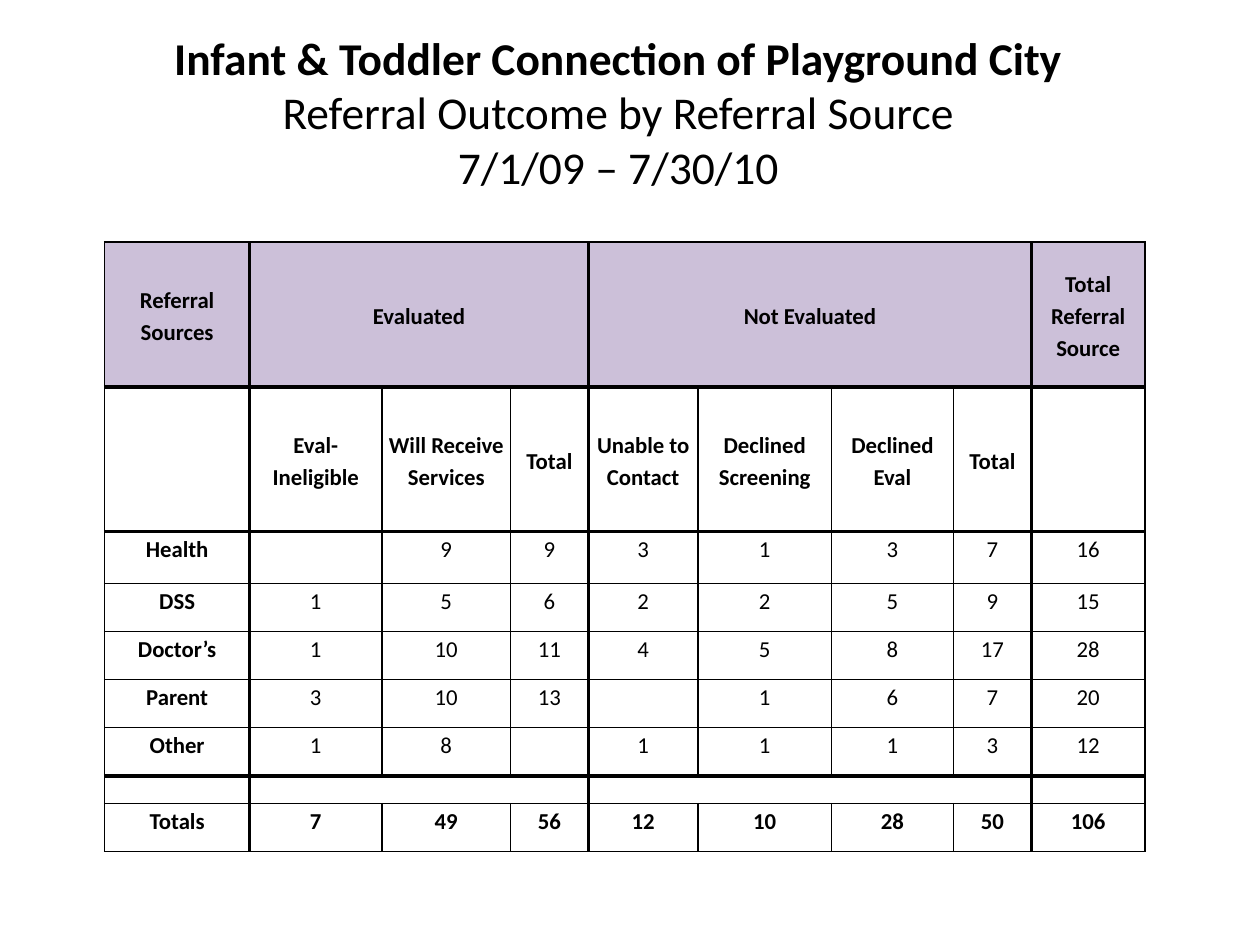
from lxml import etree
from pptx import Presentation
from pptx.dml.color import RGBColor
from pptx.enum.text import MSO_ANCHOR, MSO_AUTO_SIZE, PP_ALIGN
from pptx.oxml.ns import qn
from pptx.util import Cm, Pt

CENTER = PP_ALIGN.CENTER
TOP, MIDDLE = MSO_ANCHOR.TOP, MSO_ANCHOR.MIDDLE
GROW = MSO_AUTO_SIZE.SHAPE_TO_FIT_TEXT

FONT = "Calibri"
BLACK = "000000"
LILAC = "CCC0D9"
THIN, THICK = 1, 2.25

TITLE_LINES = [
    "Infant & Toddler Connection of Playground City",
    "Referral Outcome by Referral Source",
    "7/1/09 – 7/30/10",
]
REFERRALS = [
    ["Referral Sources", "Evaluated", "", "", "Not Evaluated", "", "", "",
     "Total Referral Source"],
    ["", "Eval-Ineligible", "Will Receive Services", "Total", "Unable to Contact",
     "Declined Screening", "Declined Eval", "Total", ""],
    ["Health", "", "9", "9", "3", "1", "3", "7", "16"],
    ["DSS", "1", "5", "6", "2", "2", "5", "9", "15"],
    ["Doctor’s", "1", "10", "11", "4", "5", "8", "17", "28"],
    ["Parent", "3", "10", "13", "", "1", "6", "7", "20"],
    ["Other", "1", "8", "", "1", "1", "1", "3", "12"],
    [""] * 9,
    ["Totals", "7", "49", "56", "12", "10", "28", "50", "106"],
]
COLUMN_WIDTHS = [2.92, 2.67, 2.59, 1.57, 2.21, 2.69, 2.46, 1.57, 2.29]
ROW_HEIGHTS = [2.92, 2.92, 1.04, 0.97, 0.97, 0.97, 0.97, 0.56, 0.97]
HEADER_ROWS = 2
SPACER_ROW = 7
TOTALS_ROW = 8
GROUPED_ROWS = (0, SPACER_ROW)
GROUPS = [(1, 3), (4, 7)]  # first and last column of each outcome group
THICK_COLUMN_EDGES = {1, 4, 8}
THICK_ROW_EDGES = {1, 2, SPACER_ROW}


def rgb(hex_colour):
    return RGBColor.from_string(hex_colour)


def style_paragraph(paragraph, size, bold):
    paragraph.alignment = CENTER
    font = paragraph.font
    font.name, font.size, font.bold = FONT, Pt(size), bold
    font.color.rgb = rgb(BLACK)


def add_title(slide, left, top, width, height):
    frame = slide.shapes.add_textbox(left, top, width, height).text_frame
    frame.word_wrap = True
    frame.auto_size = GROW
    frame.vertical_anchor = MIDDLE
    frame.text = "\n".join(TITLE_LINES)
    for index, paragraph in enumerate(frame.paragraphs):
        style_paragraph(paragraph, 26, index == 0)


def set_border(cell, side, weight):
    """Draw one edge of a cell; side is L, R, T or B."""
    properties = cell._tc.get_or_add_tcPr()
    line = etree.SubElement(properties, qn(f"a:ln{side}"), w=str(Pt(weight)))
    fill = etree.SubElement(line, qn("a:solidFill"))
    etree.SubElement(fill, qn("a:srgbClr"), val=BLACK)


def draw_borders(cell, row, column):
    def weight(edge, thick_edges):
        return THICK if edge in thick_edges else THIN

    set_border(cell, "L", weight(column, THICK_COLUMN_EDGES))
    right_edge = column + (cell.span_width if cell.is_merge_origin else 1)
    set_border(cell, "R", weight(right_edge, THICK_COLUMN_EDGES))
    set_border(cell, "T", weight(row, THICK_ROW_EDGES))
    set_border(cell, "B", weight(row + 1, THICK_ROW_EDGES))


def fill_cell(cell, row, column):
    cell.margin_left = cell.margin_right = Cm(0.13)
    cell.margin_top = cell.margin_bottom = 0
    cell.vertical_anchor = MIDDLE if row < HEADER_ROWS else TOP
    draw_borders(cell, row, column)
    if row == 0:
        cell.fill.solid()
        cell.fill.fore_color.rgb = rgb(LILAC)
    else:
        cell.fill.background()
    cell.text = REFERRALS[row][column]
    paragraph = cell.text_frame.paragraphs[0]
    bold = row < HEADER_ROWS or row == TOTALS_ROW or column == 0
    style_paragraph(paragraph, 13, bold)
    paragraph.line_spacing = 1 if row == SPACER_ROW else 1.15


def add_referral_table(slide, left, top):
    table = slide.shapes.add_table(
        len(ROW_HEIGHTS), len(COLUMN_WIDTHS), left, top,
        Cm(sum(COLUMN_WIDTHS)), Cm(sum(ROW_HEIGHTS))).table
    table.first_row = table.horz_banding = False
    for column, width in zip(table.columns, COLUMN_WIDTHS):
        column.width = Cm(width)
    for row, height in zip(table.rows, ROW_HEIGHTS):
        row.height = Cm(height)
    for row in GROUPED_ROWS:
        for first, last in GROUPS:
            table.cell(row, first).merge(table.cell(row, last))
    for row in range(len(ROW_HEIGHTS)):
        for column in range(len(COLUMN_WIDTHS)):
            cell = table.cell(row, column)
            if not cell.is_spanned:
                fill_cell(cell, row, column)


def main():
    presentation = Presentation()
    presentation.slide_width, presentation.slide_height = Cm(25.4), Cm(19.05)
    slide = presentation.slides.add_slide(presentation.slide_layouts[6])
    add_title(slide, Cm(-0.23), Cm(0.46), Cm(25.4), Cm(3.58))
    add_referral_table(slide, Cm(2.11), Cm(4.88))
    presentation.save("out.pptx")


if __name__ == "__main__":
    main()
